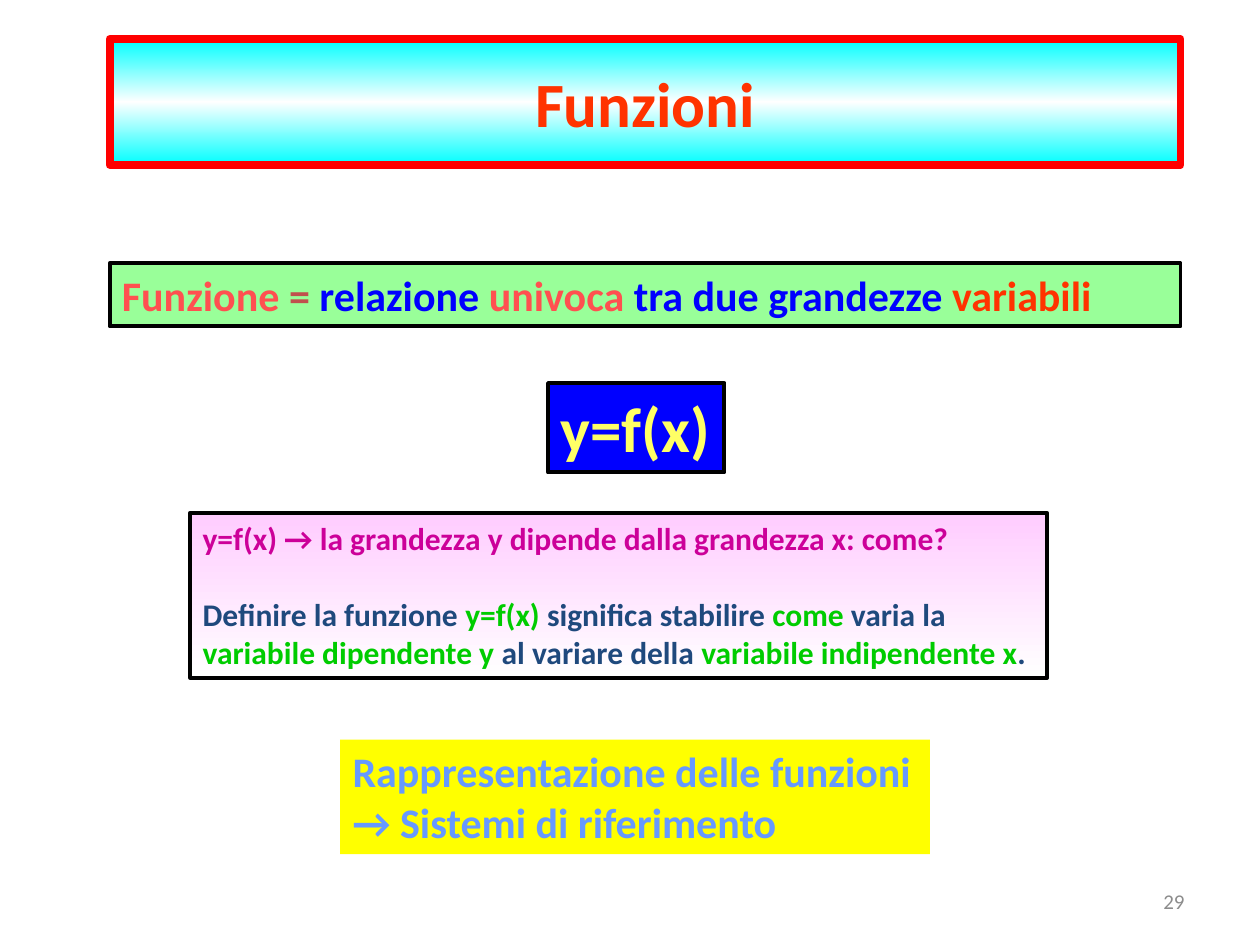
from lxml.etree import SubElement
from pptx import Presentation
from pptx.dml.color import RGBColor
from pptx.enum.shapes import MSO_SHAPE
from pptx.enum.text import MSO_ANCHOR, MSO_AUTO_SIZE, PP_ALIGN
from pptx.oxml.ns import qn
from pptx.util import Inches, Pt

CELL = 0.1
BLUE, NAVY, GREEN, CORAL, RED = "0000FF", "1F497D", "00CC00", "FF5050", "FF3300"


def color(value):
    """Turn a hex string into a colour."""
    return RGBColor.from_string(value)


def place(box):
    """Convert a box in columns and rows of the grid to slide lengths."""
    return [Inches(cells * CELL) for cells in box]


def paint(shape, stops):
    """Fill a shape with one colour, or with an even vertical gradient of several."""
    if len(stops) == 1:
        shape.fill.solid()
        shape.fill.fore_color.rgb = color(stops[0])
        return
    shape.fill.gradient()
    shape.fill.gradient_angle = 270
    stop_list = next(shape.element.iter(qn("a:gsLst")))
    for old_stop in list(stop_list):
        stop_list.remove(old_stop)
    for index, value in enumerate(stops):
        position = 100000 * index // (len(stops) - 1)
        stop = SubElement(stop_list, qn("a:gs"), pos=str(position))
        SubElement(stop, qn("a:srgbClr"), val=value)


def add_panel(slide, box, stops, line=None, width=2.25):
    """Add a filled rectangle with an optional outline."""
    shape = slide.shapes.add_shape(MSO_SHAPE.RECTANGLE, *place(box))
    shape.shadow.inherit = False
    paint(shape, stops)
    if line:
        shape.line.color.rgb = color(line)
        shape.line.width = Pt(width)
    else:
        shape.line.fill.background()
    return shape


def write(shape, paragraphs, size, bold=True, align=PP_ALIGN.LEFT,
          anchor=MSO_ANCHOR.TOP, wrap=True, grow=True, gaps=None):
    """Write paragraphs of (text, colour) runs, with gaps in points before some."""
    frame = shape.text_frame
    frame.word_wrap = wrap
    frame.auto_size = MSO_AUTO_SIZE.SHAPE_TO_FIT_TEXT if grow else MSO_AUTO_SIZE.NONE
    frame.vertical_anchor = anchor
    for index, runs in enumerate(paragraphs):
        paragraph = frame.add_paragraph() if index else frame.paragraphs[0]
        paragraph.alignment = align
        paragraph.space_before = Pt((gaps or {}).get(index, 0))
        for text, value in runs:
            run = paragraph.add_run()
            run.text = text
            run.font.name = "Calibri"
            run.font.size = Pt(size)
            run.font.bold = bold
            run.font.color.rgb = color(value)


def add_title(slide, box):
    """Add the framed title banner."""
    banner = add_panel(slide, box, ["00FFFF", "FFFFFF", "00FFFF"], "FF0000", 4.5)
    write(banner, [[("Funzioni", RED)]], 36, align=PP_ALIGN.CENTER,
          anchor=MSO_ANCHOR.MIDDLE, grow=False)


def add_definition(slide, box):
    """Add the definition of a function."""
    panel = add_panel(slide, box, ["99FF99"], "000000")
    write(panel, [[("Funzione", CORAL), (" = ", "C0504D"), ("relazione ", BLUE),
                   ("univoca ", CORAL), ("tra due grandezze ", BLUE),
                   ("variabili", RED)]], 24)


def add_formula(slide, box):
    """Add the formula panel."""
    panel = add_panel(slide, box, [BLUE], "000000")
    write(panel, [[("y=f(x)", "FFFF66")]], 36, wrap=False)


def add_explanation(slide, box):
    """Add the explanation of dependent and independent variables."""
    panel = add_panel(slide, box, ["FFCCFF", "FFFFFF"], "000000")
    write(panel, [
        [("y=f(x) → la grandezza y dipende dalla grandezza x: come?", "CC0099")],
        [("Definire la funzione ", NAVY), ("y=f(x)", GREEN),
         (" significa stabilire ", NAVY), ("come", GREEN), (" varia la", NAVY)],
        [("variabile dipendente y ", GREEN), ("al variare della ", NAVY),
         ("variabile indipendente x", GREEN), (".", NAVY)],
    ], 18, wrap=False, gaps={1: 22})


def add_conclusion(slide, box):
    """Add the pointer to the next topic."""
    panel = add_panel(slide, box, ["FFFF00"])
    lines = ["Rappresentazione delle funzioni", "→ Sistemi di riferimento"]
    write(panel, [[(line, "6699FF")] for line in lines], 24, wrap=False)


def add_page_number(slide, box):
    """Add the page number."""
    number = slide.shapes.add_textbox(*place(box))
    write(number, [[("29", "8C8C8C")]], 12, bold=False, align=PP_ALIGN.RIGHT,
          anchor=MSO_ANCHOR.MIDDLE, grow=False)


def main():
    """Build the slide and save it."""
    presentation = Presentation()
    presentation.slide_width, presentation.slide_height = place((100, 75))
    slide = presentation.slides.add_slide(presentation.slide_layouts[6])
    add_definition(slide, (8.7, 20.9, 85, 5))
    add_conclusion(slide, (27, 58.7, 46.8, 9.1))
    add_formula(slide, (43.5, 30.4, 14, 7.1))
    add_explanation(slide, (15.1, 40.7, 68, 13.1))
    add_title(slide, (8.7, 3.1, 85, 10))
    add_page_number(slide, (71.7, 69.5, 23.3, 4))
    presentation.save("out.pptx")


if __name__ == "__main__":
    main()
